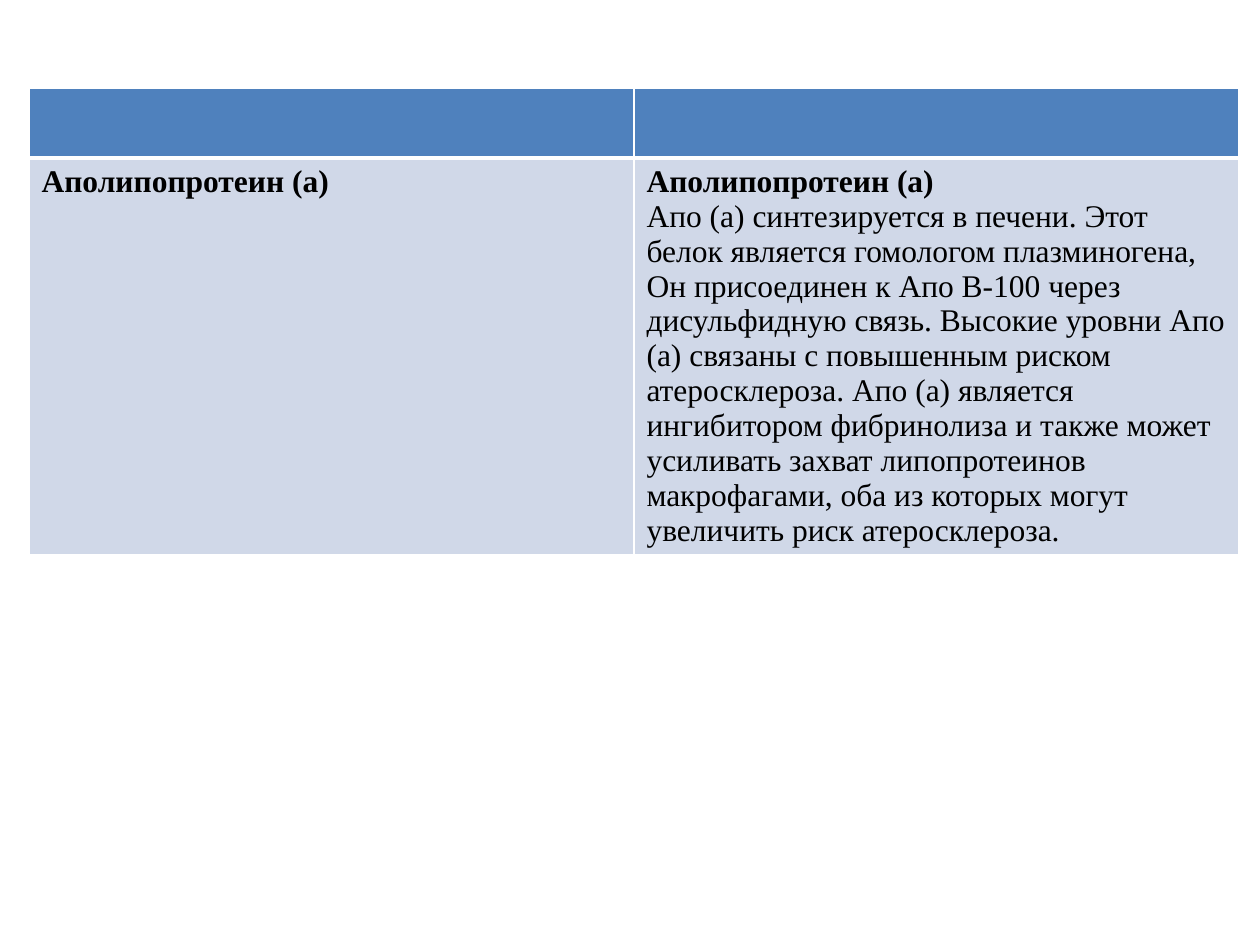
from lxml import etree
from pptx import Presentation
from pptx import util as u
from pptx.dml.color import RGBColor
from pptx.oxml.ns import qn

PX = 914400 // 126
COLORS = {"header": "4F81BD", "body": "D0D8E8", "border": "FFFFFF", "ink": "000000"}
FONT = {"name": "Times New Roman", "size": u.Pt(18)}
HEADING = "Аполипопротеин (а)"
DESCRIPTION = (
    "Апо (а) синтезируется в печени. Этот белок является гомологом плазминогена, "
    "Он присоединен к Апо B-100 через дисульфидную связь. Высокие уровни Апо (а) "
    "связаны с повышенным риском атеросклероза. Апо (а) является ингибитором "
    "фибринолиза и также может усиливать захват липопротеинов макрофагами, оба из "
    "которых могут увеличить риск атеросклероза."
)
ROWS = [
    {"height": 70, "fill": "header", "bottom": 3, "cells": [[], []]},
    {"height": 396, "fill": "body", "bottom": 1,
     "cells": [[(HEADING, True)], [(HEADING, True), (DESCRIPTION, False)]]},
]


def px(length):
    """Turn whole pixels into EMU."""
    return u.Emu(length * PX)


def add_borders(cell, widths):
    """Draw the cell's sides in the border colour at the given point widths."""
    properties = cell._tc.get_or_add_tcPr()
    for side, width in widths.items():
        line = etree.SubElement(properties, qn(f"a:ln{side}"), w=str(u.Pt(width)))
        fill = etree.SubElement(line, qn("a:solidFill"))
        etree.SubElement(fill, qn("a:srgbClr"), val=COLORS["border"])


def write_paragraphs(cell, lines):
    """Write each (words, bold) pair as a paragraph of the cell."""
    for index, (words, bold) in enumerate(lines):
        frame = cell.text_frame
        para = frame.add_paragraph() if index else frame.paragraphs[0]
        span = para.add_run()
        span.text = words
        for name, value in {**FONT, "bold": bold}.items():
            setattr(span.font, name, value)
        span.font.color.rgb = RGBColor.from_string(COLORS["ink"])


def add_protein_table(page):
    """Add the two-column table of the apolipoprotein and its description."""
    height = sum(row["height"] for row in ROWS)
    table = page.shapes.add_table(
        len(ROWS), 2, px(29), px(88), px(1210), px(height)).table
    for row_index, row in enumerate(ROWS):
        table.rows[row_index].height = px(row["height"])
        top = ROWS[row_index - 1]["bottom"] if row_index else 1
        for column_index, lines in enumerate(row["cells"]):
            cell = table.cell(row_index, column_index)
            add_borders(cell, {"L": 1, "R": 1, "T": top, "B": row["bottom"]})
            cell.fill.solid()
            cell.fill.fore_color.rgb = RGBColor.from_string(COLORS[row["fill"]])
            write_paragraphs(cell, lines)


def main():
    """Build and save the deck."""
    deck = Presentation()
    deck.slide_width, deck.slide_height = px(1260), px(945)
    page = deck.slides.add_slide(deck.slide_layouts[6])
    add_protein_table(page)
    deck.save("out.pptx")


if __name__ == "__main__":
    main()
